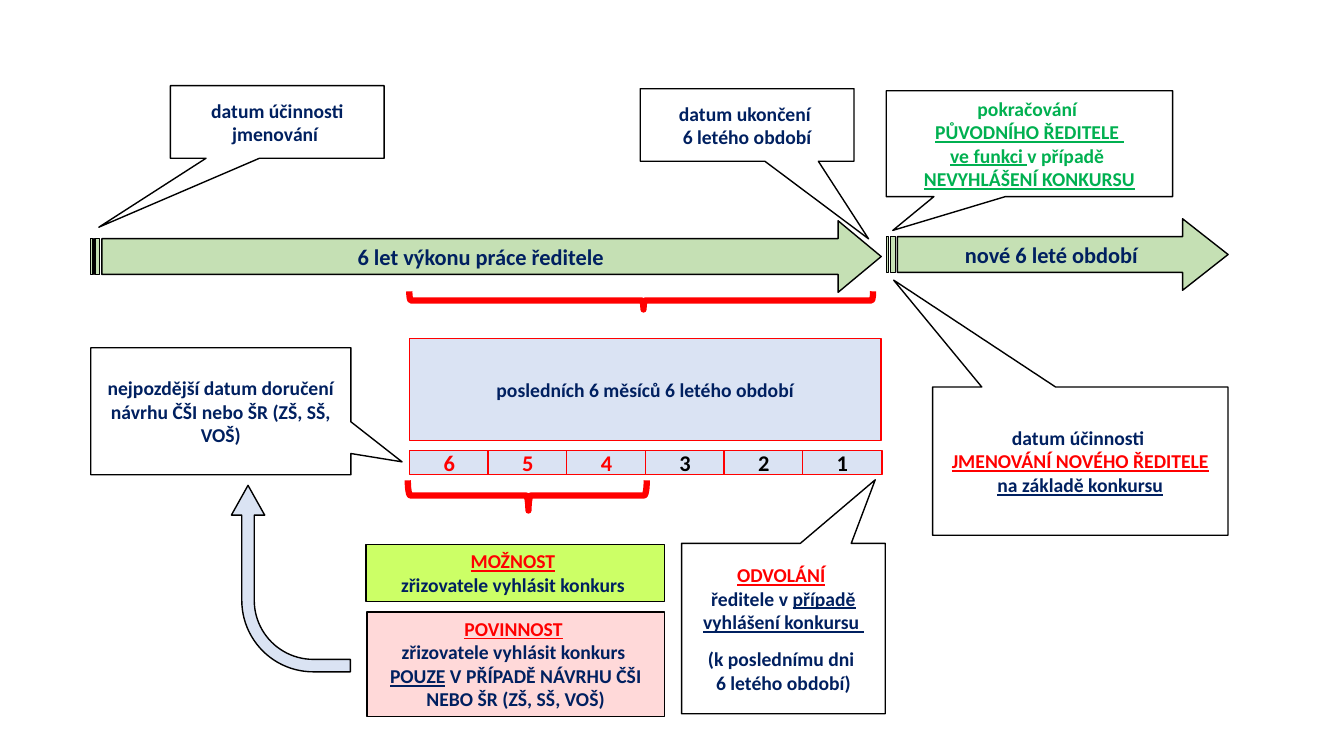
import pptx
import pptx.util
import pptx.dml.color
import pptx.enum.shapes
import pptx.enum.text

SLIDE_W, SLIDE_H = 13.33, 7.5
CELL = SLIDE_H / 75  # side of one grid cell in inches
NAVY, RED, GREEN, BLACK, WHITE = "002060", "FF0000", "00B050", "000000", "FFFFFF"
PALE_BLUE, PALE_GREEN, LIME, PINK = "DAE3F3", "C5E0B4", "CCFF66", "FFD9D9"
KIND = pptx.enum.shapes.MSO_SHAPE
ANCHOR = pptx.enum.text.MSO_ANCHOR
FONT = {"name": "Calibri", "bold": True}


def colour(hex_value):
    return pptx.dml.color.RGBColor.from_string(hex_value)


def grid(cells):
    return pptx.util.Inches(cells * CELL)


def add_part(slide, box, kind, place, fill=None, line=BLACK, weight=1, adjust=(), turned=False):
    """Place a shape on grid cells counted from the region's corner."""
    left, top, width, height = place
    left, top = box[0] + left, box[1] + top
    if turned:  # the frame of a quarter-turned shape swaps its sides
        left, top = left + (width - height) / 2, top + (height - width) / 2
        width, height = height, width
    part = slide.shapes.add_shape(kind, *map(grid, (left, top, width, height)))
    part.shadow.inherit = False
    part.rotation = 270 if turned else 0
    for index, value in enumerate(adjust):
        part.adjustments[index] = value
    if fill:
        part.fill.solid()
        part.fill.fore_color.rgb = colour(fill)
    else:
        part.fill.background()
    part.line.color.rgb = colour(line)
    part.line.width = pptx.util.Pt(weight)
    return part


def write(part, paragraphs, size=14, anchor=ANCHOR.MIDDLE, gap=0):
    """Paragraphs are lists of (text, colour, underlined); gap parts them, in points."""
    frame = part.text_frame
    frame.word_wrap = True
    frame.vertical_anchor = anchor
    for number, runs in enumerate(paragraphs):
        paragraph = frame.add_paragraph() if number else frame.paragraphs[0]
        paragraph.alignment = pptx.enum.text.PP_ALIGN.CENTER
        if number and gap:
            paragraph.space_before = pptx.util.Pt(gap)
        for text, shade, underlined in runs:
            for row, piece in enumerate(text.split("\n")):
                if row:
                    paragraph.add_line_break()
                if not piece:
                    continue
                run = paragraph.add_run()
                run.text = piece
                for name, value in FONT.items():
                    setattr(run.font, name, value)
                run.font.size = pptx.util.Pt(size)
                run.font.underline = underlined
                run.font.color.rgb = colour(shade)


def add_callout(slide, box, place, tip, paragraphs, gap=0):
    callout = add_part(slide, box, KIND.RECTANGULAR_CALLOUT, place, WHITE, adjust=tip)
    write(callout, paragraphs, gap=gap)


def add_brace(slide, box, place):
    add_part(slide, box, KIND.LEFT_BRACE, place, None, RED, 4.5, (0.083, 0.505), True)


def build_timeline(slide, box):
    # Terms of office
    for place, head, label in (
        ((0, 13.4, 78.4, 7.1), 0.602, "6 let výkonu práce ředitele"),
        ((78.9, 13.2, 33.9, 7.1), 0.636, "nové 6 leté období"),
    ):
        term = add_part(slide, box, KIND.STRIPED_RIGHT_ARROW, place, PALE_GREEN, adjust=(0.5, head))
        write(term, [[(label, NAVY, False)]], 16)
    # Dates above the arrows
    add_callout(slide, box, (7.9, 0, 21.2, 7.2), (-0.835, 1.45),
                [[("datum účinnosti jmenování ", NAVY, False)]])
    add_callout(slide, box, (54.5, 0.3, 21.2, 7.2), (0.568, 1.568),
                [[("datum ukončení ", NAVY, False)], [("6 letého období", NAVY, False)]])
    add_callout(slide, box, (78.9, 0.5, 28.4, 10.5), (-0.477, 0.82), [
        [("pokračování \n", GREEN, False),
         ("PŮVODNÍHO ŘEDITELE \nve funkci ", GREEN, True),
         ("v případě ", GREEN, False)],
        [("NEVYHLÁŠENÍ KONKURSU", GREEN, True)]])


def build_last_months(slide, box):
    add_brace(slide, box, (0, 0, 46, 1.8))
    period = add_part(slide, box, KIND.RECTANGLE, (0, 4.7, 46.8, 10.1), PALE_BLUE, RED)
    write(period, [[("posledních 6 měsíců 6 letého období", NAVY, False)]])
    # Countdown of months
    for column, month in enumerate(range(6, 0, -1)):
        cell = add_part(slide, box, KIND.RECTANGLE, (7.8 * column, 15.8, 7.9, 2.4), PALE_BLUE, RED)
        write(cell, [[(str(month), RED if month > 3 else BLACK, False)]], 16)
    add_brace(slide, box, (-0.15, 18.75, 23.7, 3))


def build_outcomes(slide, box):
    # Deadline and the arrow leading to it
    add_callout(slide, box, (0, 0, 25.8, 12.6), (0.697, 0.399),
                [[("nejpozdější datum doručení návrhu ČŠI nebo ŠR (ZŠ, SŠ, VOŠ)", NAVY, False)]])
    add_part(slide, box, KIND.BENT_ARROW, (13.95, 13.65, 11.8, 18.5), PALE_BLUE,
             adjust=(0.105, 0.14, 0.25, 0.601), turned=True)
    # Option and duty to announce the competition
    for place, fill, heading, rest in (
        ((27.3, 19.5, 29.6, 5.7), LIME, "MOŽNOST", []),
        ((27.4, 26.2, 29.5, 10.4), PINK, "POVINNOST",
         [[("POUZE", NAVY, True), (" V PŘÍPADĚ NÁVRHU ČŠI NEBO ŠR (ZŠ, SŠ, VOŠ)", NAVY, False)]]),
    ):
        announcement = add_part(slide, box, KIND.RECTANGLE, place, fill)
        write(announcement, [[(heading, RED, True), (" \n", BLACK, False),
                              ("zřizovatele vyhlásit konkurs ", NAVY, False)]] + rest,
              anchor=ANCHOR.TOP)
        announcement.text_frame.auto_size = pptx.enum.text.MSO_AUTO_SIZE.SHAPE_TO_FIT_TEXT
    # Dismissal and new appointment
    add_callout(slide, box, (58.6, 19.4, 20.2, 16.9), (0.451, -0.873), [
        [("ODVOLÁNÍ", RED, True), (" \n", RED, False), ("ředitele v ", NAVY, False),
         ("případě vyhlášení konkursu ", NAVY, True)],
        [("(k poslednímu dni \n6 letého období)", NAVY, False)]], gap=9.6)
    add_callout(slide, box, (83.5, 3.9, 29.3, 14.7), (-0.632, -1.222), [
        [("datum účinnosti \n", NAVY, False), ("JMENOVÁNÍ NOVÉHO ŘEDITELE ", RED, True),
         ("na základě konkursu", NAVY, True)]])


def main():
    deck = pptx.Presentation()
    deck.slide_width = pptx.util.Inches(SLIDE_W)
    deck.slide_height = pptx.util.Inches(SLIDE_H)
    slide = deck.slides.add_slide(deck.slide_layouts[6])
    # Region boxes: column, row, columns, rows
    build_timeline(slide, (9, 8.5, 112.8, 20.5))
    build_last_months(slide, (40.6, 28.9, 46.9, 21.8))
    build_outcomes(slide, (9, 34.5, 112.8, 36.6))
    deck.save("out.pptx")


if __name__ == "__main__":
    main()
